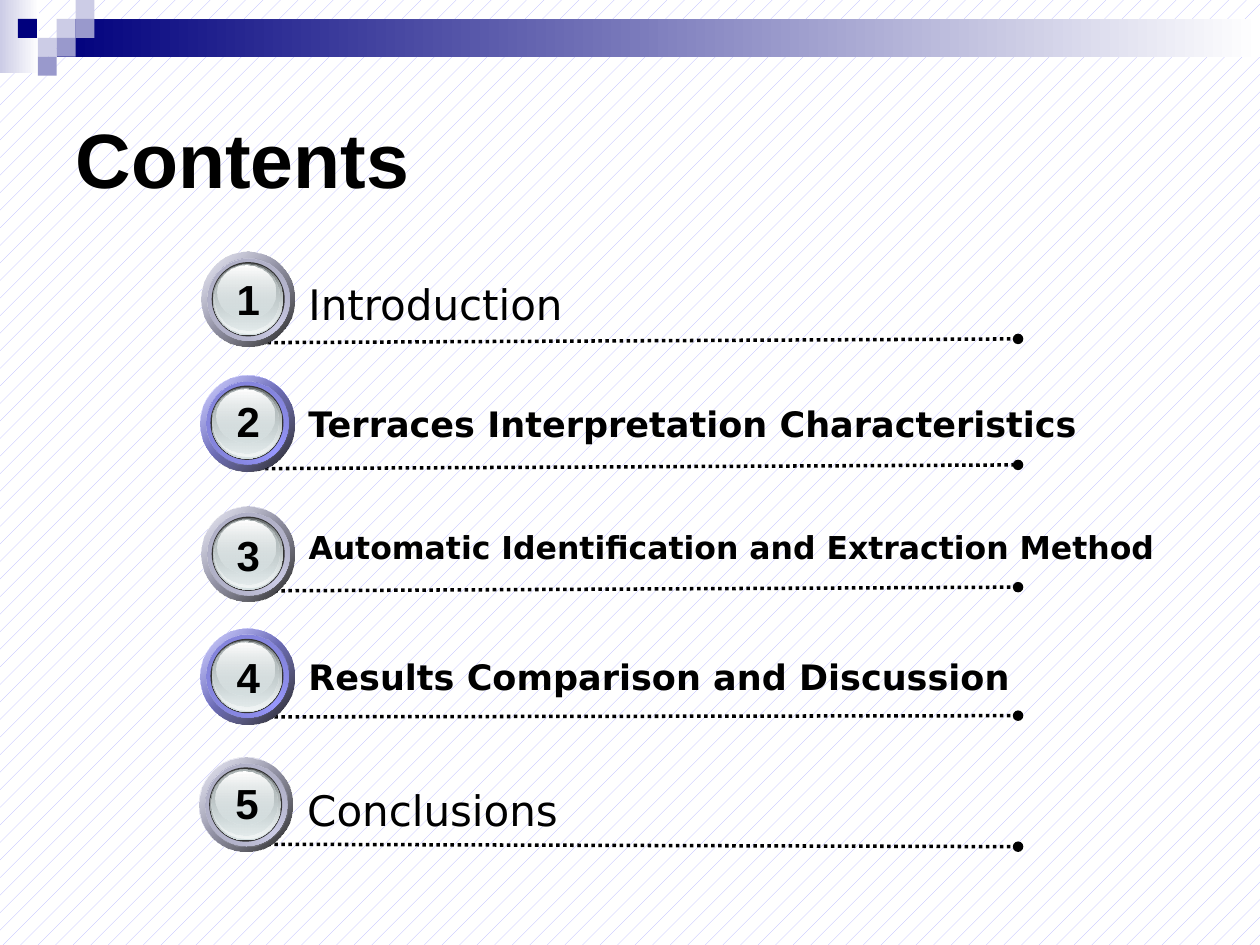
from lxml import etree
from pptx import Presentation
from pptx import util as u
from pptx.dml.color import RGBColor
from pptx.enum import dml, shapes, text
from pptx.oxml.ns import qn

THEME = {
    "ink": "000000", "paper": "FFFFFF", "hatch": "B2B2FF",
    "navy": "00007D", "mid": "9999CC", "pale": "CCCCE6",
    "rim": "333333", "slate": "636869", "steel": "AAB2B3",
    "glass": "D6E1E2", "gleam": "F1F5F5",
    "title_font": "Arial", "list_font": "DejaVu Sans",
    "title_size": 44, "number_size": 24, "line_width": 2,
}
INK, PAPER, GLASS = THEME["ink"], THEME["paper"], THEME["glass"]

deck = Presentation()
deck.slide_width, deck.slide_height = u.Inches(10), u.Inches(7.5)
UNIT = deck.slide_width / 100  # square grid: 100 columns by 75 rows
slide = deck.slides.add_slide(deck.slide_layouts[5])


def draw(parent, preset, box, stops, angle=0):
    """Add a borderless shape; one stop is a solid, more are a gradient."""
    part = parent.add_shape(preset, *(round(n * UNIT) for n in box))
    part.shadow.inherit = False
    part.line.fill.background()
    if len(stops) == 1:
        part.fill.solid()
        part.fill.fore_color.rgb = RGBColor.from_string(stops[0][1])
        return
    part.fill.gradient()
    gradient = part.element.spPr.find(qn("a:gradFill"))
    gradient.find(qn("a:lin")).set("ang", str(angle * 60000))
    stop_list = gradient.find(qn("a:gsLst"))
    stop_list.clear()
    for position, colour, *opacity in stops:
        stop = etree.SubElement(stop_list, qn("a:gs"), pos=str(position * 1000))
        tint = etree.SubElement(stop, qn("a:srgbClr"), val=colour)
        for share in opacity:
            etree.SubElement(tint, qn("a:alpha"), val=str(share * 1000))


def write(holder, box, words, paragraph_format, font_format):
    """Place a text holder on the grid and format its only paragraph."""
    holder.left, holder.top, holder.width, holder.height = (
        round(n * UNIT) for n in box)
    frame = holder.text_frame
    frame.word_wrap = True
    frame.text = words
    paragraph = frame.paragraphs[0]
    for name, value in paragraph_format.items():
        setattr(paragraph, name, value)
    font = paragraph.runs[0].font
    for name, value in font_format.items():
        setattr(font, name, value)
    font.color.rgb = RGBColor.from_string(INK)


# Background pattern
backdrop = slide.background.fill
backdrop.patterned()
backdrop.pattern = dml.MSO_PATTERN.PERCENT_5
backdrop.fore_color.rgb = RGBColor.from_string(THEME["hatch"])
backdrop.back_color.rgb = RGBColor.from_string(PAPER)

# Header bands and checker squares
header = slide.shapes.add_group_shape().shapes
RECT, OVAL = shapes.MSO_SHAPE.RECTANGLE, shapes.MSO_SHAPE.OVAL
SQUARE = 1.5
for band, colour in [((0, 0, 3.1, 5.8), "pale"), ((4.5, 1.5, 95.5, 3), "navy")]:
    draw(header, RECT, band, [(0, THEME[colour]), (100, PAPER)])
for column, row, colour in [(3, 1, "pale"), (4, 0, "pale"), (4, 1, "mid"),
                            (2, 2, "pale"), (0.95, 1, "navy"),
                            (3, 2, "mid"), (2, 3, "mid")]:
    draw(header, RECT, (column * SQUARE, row * SQUARE, SQUARE, SQUARE),
         [(0, THEME[colour])])

# Title
slide.shapes.title.text_frame.vertical_anchor = text.MSO_ANCHOR.MIDDLE
write(slide.shapes.title, (5, 5, 90, 15), "Contents",
      {"alignment": text.PP_ALIGN.LEFT},
      {"name": THEME["title_font"], "size": u.Pt(THEME["title_size"]), "bold": True})

# Ring colours: base, shaded edge, highlight edge
GREY = ("CCCCE6", "9C9CB0", "A7A7BD")
VIOLET = ("9999FF", "7575C3", "7E7ED1")

# Topic, type size, bold, ring, badge (left, top, size),
# number top, label (left, top, width, height), rule (start x, start y, end y)
topics = [
    ("Introduction", 24, False, GREY, (16, 20, 7.4),
     21.2, (23.5, 20.8, 48.3, 5.3), (20.1, 27.2, 26.9)),
    ("Terraces Interpretation Characteristics", 20, True, VIOLET, (15.9, 29.8, 7.5),
     30.9, (23.5, 30.8, 64, 5), (19.9, 37.2, 36.9)),
    ("Automatic Identification and Extraction Method", 18, True, GREY, (16, 40.2, 7.4),
     41.5, (23.5, 40.8, 69.9, 4.3), (20.1, 46.9, 46.6)),
    ("Results Comparison and Discussion", 20, True, VIOLET, (15.9, 49.9, 7.5),
     51.2, (23.5, 50.9, 64, 5), (20.1, 56.9, 56.8)),
    ("Conclusions", 24, False, GREY, (15.8, 60.1, 7.4),
     61.2, (23.4, 61, 57.4, 5.4), (20.1, 67, 67.2)),
]
RULE_END = 80.8

for number, (topic, size, bold, ring, badge, number_top, label, rule) in enumerate(topics, 1):
    # Dotted rule with a round end
    start_x, start_y, end_y = rule
    dots = slide.shapes.add_connector(
        shapes.MSO_CONNECTOR.STRAIGHT,
        *(round(n * UNIT) for n in (start_x, start_y, RULE_END, end_y)))
    dots.line.color.rgb = RGBColor.from_string(INK)
    dots.line.width = u.Pt(THEME["line_width"])
    dots.line.dash_style = dml.MSO_LINE.ROUND_DOT
    outline = dots.element.spPr.find(qn("a:ln"))
    etree.SubElement(outline, qn("a:tailEnd"), type="oval")
    etree.SubElement(dots.element.spPr, qn("a:effectLst"))

    # Badge: discs stacked from the outer ring to the inner gloss
    base, edge, glow = ring
    left, top, disc = badge
    discs = [
        (0, 0, disc, disc + 0.1, [(0, PAPER), (50, base), (100, PAPER)], 45),
        (0, 0, disc, disc + 0.1, [(0, base, 32), (100, INK, 90)], 45),
        (0.5, 0.5, 6.5, 6.55, [(0, edge), (50, base), (100, edge)], 315),
        (0.5, 0.5, 6.5, 6.55, [(0, glow), (100, base, 0)], 45),
        (0.8, 0.8, 5.8, 5.9, [(0, THEME["rim"])], 0),
        (0.9, 0.9, 5.6, 5.7, [(0, THEME["slate"]), (100, GLASS)], 90),
        (0.95, 0.95, 5.5, 5.5, [(0, GLASS, 0), (100, THEME["gleam"])], 90),
        (1, 1, 5.2, 5.2, [(0, THEME["steel"]), (100, GLASS, 48)], 90),
        (1.3, 1.1, 4.6, 4.2, [(0, PAPER), (100, GLASS, 38)], 90),
    ]
    button = slide.shapes.add_group_shape().shapes
    for inset_x, inset_y, width, height, stops, angle in discs:
        draw(button, OVAL, (left + inset_x, top + inset_y, width, height), stops, angle)

    # Number and topic
    number_left = 17.5 if number == len(topics) else 17.6
    for box, words, paragraph_format, font_format in [
        ((number_left, number_top, 4.2, 5), str(number),
         {"alignment": text.PP_ALIGN.CENTER},
         {"name": THEME["title_font"], "size": u.Pt(THEME["number_size"]), "bold": True}),
        (label, topic, {"line_spacing": 1.2},
         {"name": THEME["list_font"], "size": u.Pt(size), "bold": bold}),
    ]:
        caption = slide.shapes.add_textbox(0, 0, 0, 0)
        caption.text_frame.auto_size = text.MSO_AUTO_SIZE.SHAPE_TO_FIT_TEXT
        write(caption, box, words, paragraph_format, font_format)

deck.save("out.pptx")
